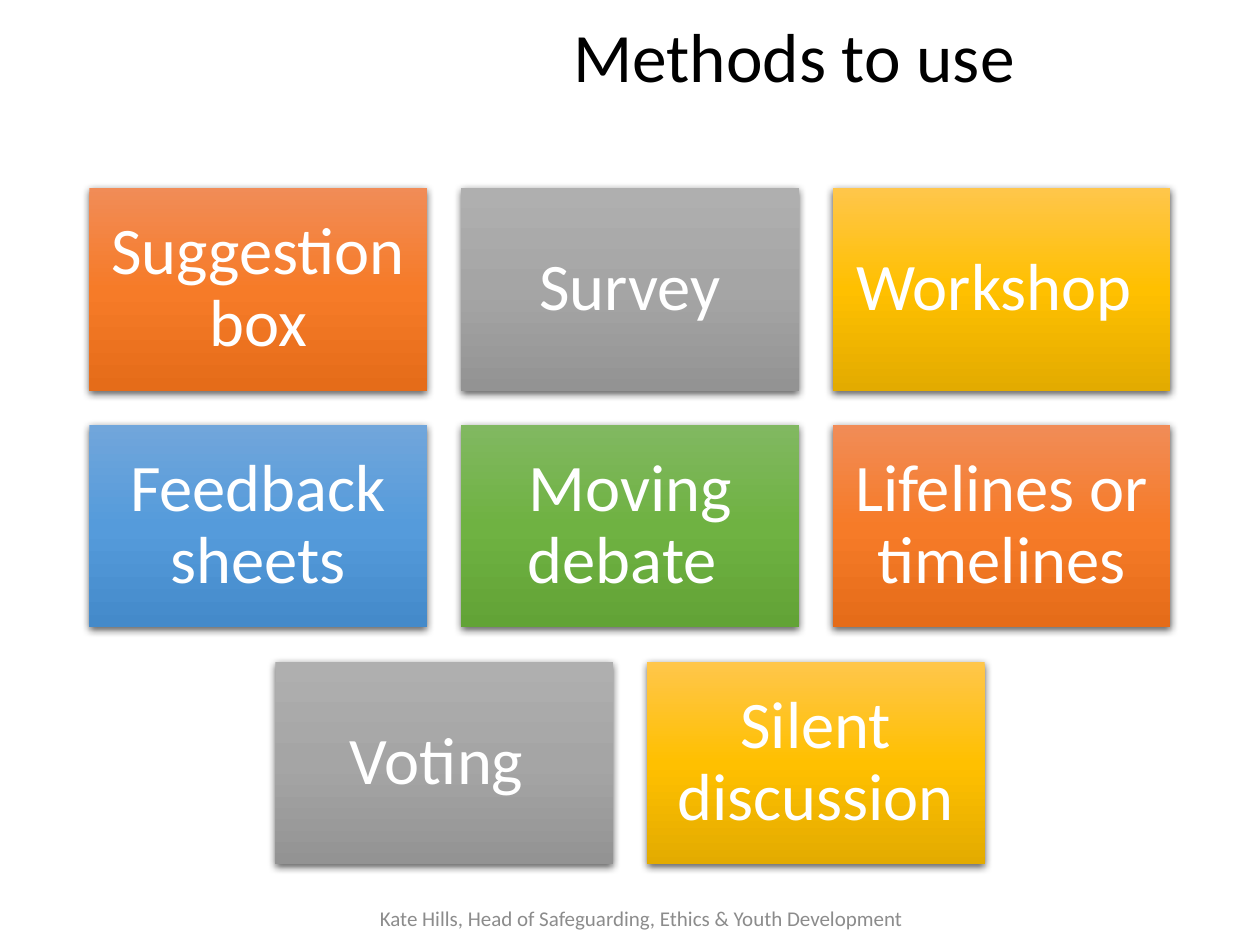
from copy import deepcopy

from lxml import etree
from pptx import Presentation
from pptx.dml.color import RGBColor
from pptx.enum.shapes import MSO_SHAPE
from pptx.enum.text import MSO_ANCHOR, MSO_AUTO_SIZE, PP_ALIGN
from pptx.oxml.ns import qn
from pptx.util import Inches, Pt

RECTANGLE = MSO_SHAPE.RECTANGLE
MIDDLE = MSO_ANCHOR.MIDDLE
NO_AUTOFIT = MSO_AUTO_SIZE.NONE
LEFT = PP_ALIGN.LEFT
CENTER = PP_ALIGN.CENTER

COLORS = {"title": "000000", "tile_text": "FFFFFF", "footer": "8C8C8C", "shadow": "000000"}
GRADIENTS = {
    "orange": ("F18C57", "F67B28", "E56C19"),
    "gray": ("AFAFAF", "A5A5A5", "939393"),
    "gold": ("FFC64B", "FFC000", "E3AB00"),
    "blue": ("71A6DB", "559BDB", "448ACA"),
    "green": ("81B861", "6FB242", "62A336"),
}
METHOD_ROWS = [
    [("Suggestion box", "orange"), ("Survey", "gray"), ("Workshop ", "gold")],
    [("Feedback sheets", "blue"), ("Moving debate ", "green"), ("Lifelines or timelines", "orange")],
    [("Voting ", "gray"), ("Silent discussion", "gold")],
]
PAGE_WIDTH = 10
TILE_WIDTH, TILE_HEIGHT = 2.68, 1.61
GAP = 0.27
GRID_TOP = 1.49


def write_text(box, text, size, color, align, spacing=1.0):
    frame = box.text_frame
    frame_format = {"word_wrap": True, "auto_size": NO_AUTOFIT, "vertical_anchor": MIDDLE}
    for name, value in frame_format.items():
        setattr(frame, name, value)
    para = frame.paragraphs[0]
    para.alignment = align
    para.line_spacing = spacing
    span = para.add_run()
    span.text = text
    for name, value in {"name": "Calibri", "size": Pt(size)}.items():
        setattr(span.font, name, value)
    span.font.color.rgb = RGBColor.from_string(COLORS[color])


def fill_gradient(shape, colors):
    shape.fill.gradient()
    shape.fill.gradient_angle = 270
    stop_list = shape._element.spPr.find(".//" + qn("a:gsLst"))
    stop_list.append(deepcopy(stop_list[0]))
    for index, (stop, color) in enumerate(zip(shape.fill.gradient_stops, colors)):
        stop.position = index / 2
        stop.color.rgb = RGBColor.from_string(color)


def add_shadow(shape):
    shape.shadow.inherit = False
    effects = shape._element.spPr.find(qn("a:effectLst"))
    shadow = etree.SubElement(
        effects, qn("a:outerShdw"), blurRad=str(Pt(4.5)), dist=str(Pt(1.5)),
        dir="5400000", algn="ctr", rotWithShape="0",
    )
    color = etree.SubElement(shadow, qn("a:srgbClr"), val=COLORS["shadow"])
    etree.SubElement(color, qn("a:alpha"), val="63000")


def add_tile(page, left, top, text, gradient):
    tile = page.shapes.add_shape(
        RECTANGLE, Inches(left), Inches(top), Inches(TILE_WIDTH), Inches(TILE_HEIGHT)
    )
    fill_gradient(tile, GRADIENTS[gradient])
    tile.line.fill.background()
    add_shadow(tile)
    for side in ("left", "top", "right", "bottom"):
        setattr(tile.text_frame, f"margin_{side}", Inches(0.16))
    write_text(tile, text, 38, "tile_text", CENTER, 0.9)


def add_method_grid(page):
    for row, methods in enumerate(METHOD_ROWS):
        row_width = len(methods) * (TILE_WIDTH + GAP) - GAP
        row_left = (PAGE_WIDTH - row_width) / 2
        top = GRID_TOP + row * (TILE_HEIGHT + GAP)
        for column, (text, gradient) in enumerate(methods):
            add_tile(page, row_left + column * (TILE_WIDTH + GAP), top, text, gradient)


def add_title(page):
    title = page.shapes.title
    place = {"left": 4.45, "top": 0.12, "width": 4.75, "height": 0.72}
    for name, value in place.items():
        setattr(title, name, Inches(value))
    write_text(title, "Methods to use", 39.6, "title", LEFT, 0.9)


def add_footer(page):
    footer = page.shapes.add_textbox(Inches(2.58), Inches(7.13), Inches(5.02), Inches(0.31))
    text = "Kate Hills, Head of Safeguarding, Ethics & Youth Development"
    write_text(footer, text, 12, "footer", CENTER)


def main():
    deck = Presentation()
    deck.slide_width = Inches(PAGE_WIDTH)
    deck.slide_height = Inches(7.5)
    page = deck.slides.add_slide(deck.slide_layouts[5])
    add_footer(page)
    add_title(page)
    add_method_grid(page)
    deck.save("out.pptx")


if __name__ == "__main__":
    main()
